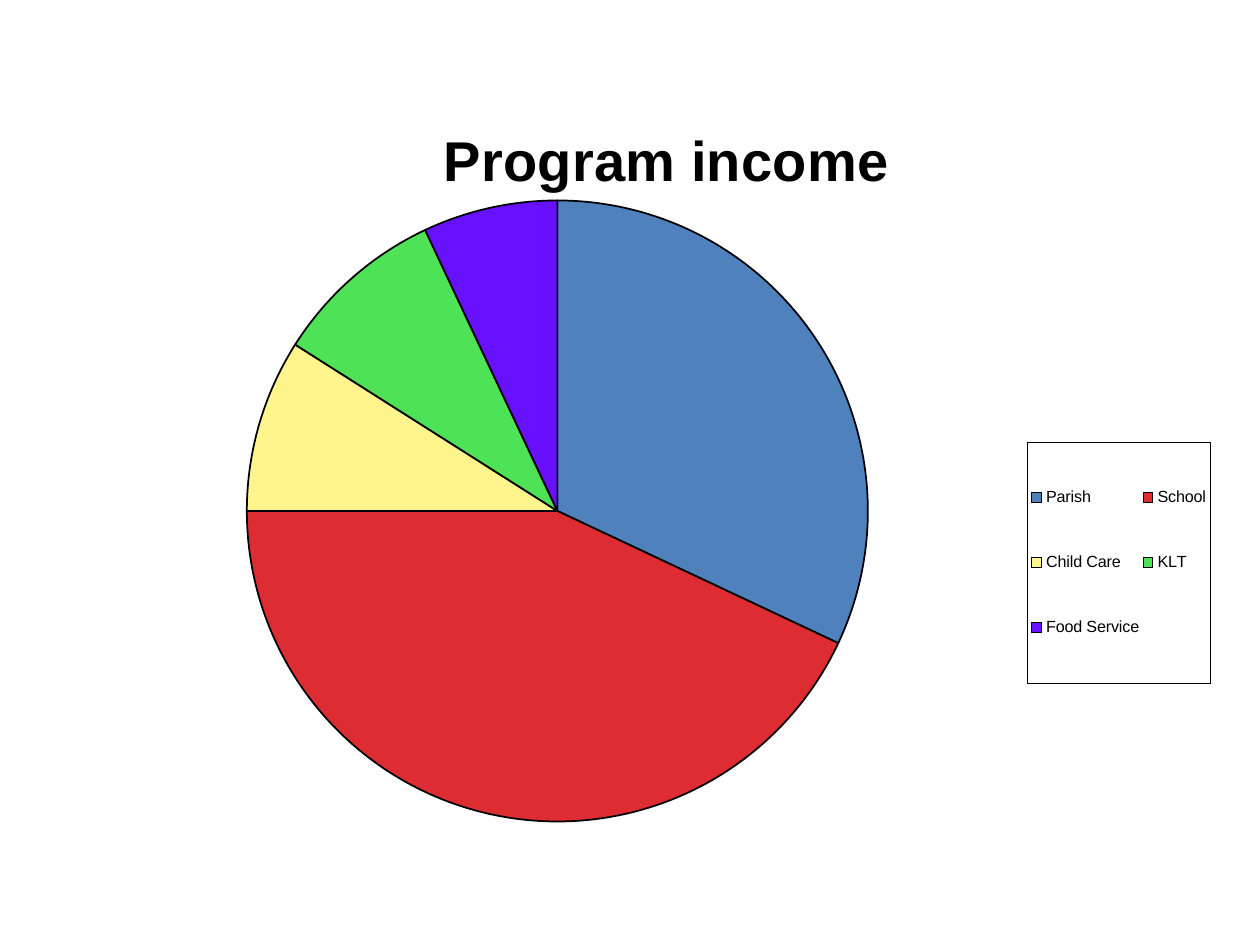
from lxml.etree import SubElement
from pptx import Presentation
from pptx.chart.data import CategoryChartData
from pptx.dml.color import RGBColor
from pptx.enum.chart import XL_CHART_TYPE, XL_LEGEND_POSITION
from pptx.oxml import parse_xml
from pptx.oxml.ns import nsdecls, qn
from pptx.util import Inches, Pt

FONT = "Arial"
COLORS = {
    "text": "000000",
    "outline": "000000",
    "Parish ": "4F81BD",
    "School": "DD2D32",
    "Child Care": "FFF58C",
    "KLT": "4EE257",
    "Food Service": "6711FF",
}
INCOME_SHARES = {"Parish ": 32, "School": 43, "Child Care": 9, "KLT": 9, "Food Service": 7}


def rgb(name):
    return RGBColor.from_string(COLORS[name])


def format_font(font, size, bold=False, color="text"):
    font.name = FONT
    font.size = Pt(size)
    font.bold = bold
    font.color.rgb = rgb(color)


def write_text(text_frame, text, **font_format):
    run = text_frame.paragraphs[0].add_run()
    run.text = text
    format_font(run.font, **font_format)


def set_layout(part, **values):
    """Place a chart part by hand, in fractions of the chart's size."""
    for old_layout in part.findall(qn("c:layout")):
        part.remove(old_layout)
    layout = parse_xml(f"<c:layout {nsdecls('c')}/>")
    manual = SubElement(layout, qn("c:manualLayout"))
    for tag, value in values.items():
        SubElement(manual, qn(f"c:{tag}")).set("val", str(value))
    overlay = part.find(qn("c:overlay"))
    if overlay is None:
        part.insert(0, layout)
    else:
        overlay.addprevious(layout)


def add_pie(slide):
    shares = CategoryChartData(number_format="0")
    shares.categories = list(INCOME_SHARES)
    shares.add_series("Series 1", list(INCOME_SHARES.values()))
    chart = slide.shapes.add_chart(
        XL_CHART_TYPE.PIE, Inches(0.25), Inches(0.58), Inches(9.39), Inches(6.39), shares
    ).chart
    format_font(chart.font, size=10)
    pie = chart.plots[0]
    pie.vary_by_categories = True
    for index, program in enumerate(INCOME_SHARES):
        slice_format = pie.series[0].points[index].format
        slice_format.fill.solid()
        slice_format.fill.fore_color.rgb = rgb(program)
        slice_format.line.color.rgb = rgb("outline")
        slice_format.line.width = Pt(1)
    plot_area = chart.element.find(f".//{qn('c:plotArea')}")
    set_layout(plot_area, layoutTarget="inner", xMode="edge", yMode="edge",
               x=0.182, y=0.158, w=0.525, h=0.772)
    return chart


def add_title(chart):
    chart.has_title = True
    write_text(chart.chart_title.text_frame, "Program income", size=32, bold=True)
    set_layout(chart.element.find(f".//{qn('c:title')}"),
               xMode="edge", yMode="edge", x=0.34, y=0.05)


def add_legend(chart):
    chart.has_legend = True
    chart.legend.position = XL_LEGEND_POSITION.RIGHT
    chart.legend.include_in_layout = False
    format_font(chart.legend.font, size=9.2)
    legend = chart.element.find(f".//{qn('c:legend')}")
    set_layout(legend, xMode="edge", yMode="edge", x=0.842, y=0.458, w=0.154, h=0.3)
    border = parse_xml(
        f'<c:spPr {nsdecls("c", "a")}><a:noFill/><a:ln w="{Pt(0.25)}"><a:solidFill>'
        f'<a:srgbClr val="{COLORS["outline"]}"/></a:solidFill></a:ln></c:spPr>'
    )
    legend.find(qn("c:overlay")).addnext(border)


def main():
    presentation = Presentation()
    presentation.slide_width = Inches(10)
    presentation.slide_height = Inches(7.5)
    slide = presentation.slides.add_slide(presentation.slide_layouts[6])
    income_chart = add_pie(slide)
    add_title(income_chart)
    add_legend(income_chart)
    presentation.save("out.pptx")


if __name__ == "__main__":
    main()
